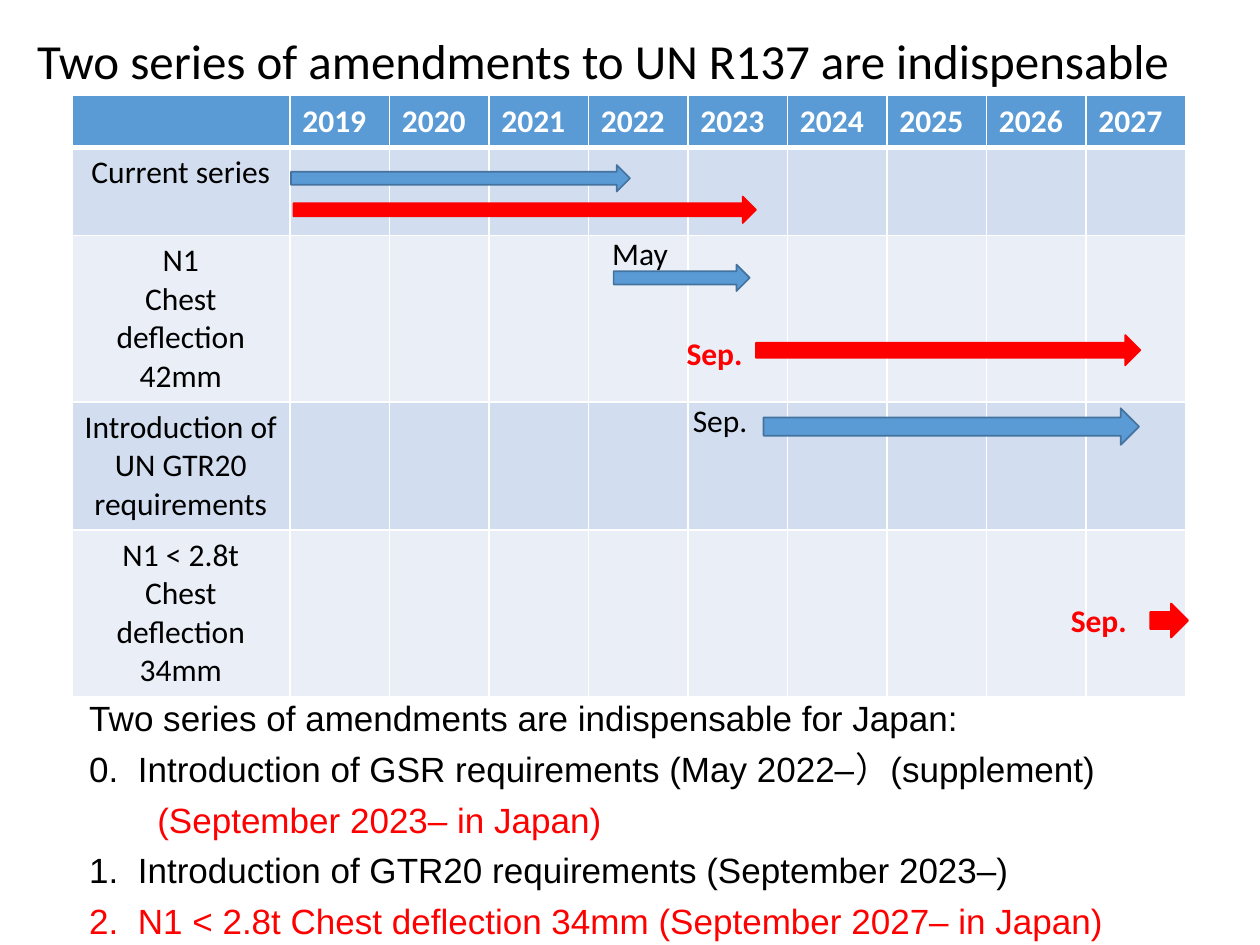
from lxml.etree import SubElement
from pptx import Presentation
from pptx.dml.color import RGBColor
from pptx.enum.shapes import MSO_SHAPE as Shape
from pptx.enum.text import MSO_ANCHOR as Anchor, PP_ALIGN as Align
from pptx.oxml.ns import qn
from pptx.util import Inches, Pt

BLUE, DARK_BLUE, RED = "5B9BD5", "43739E", "FF0000"
BLACK, WHITE = "000000", "FFFFFF"
BANDS = ["D2DEEF", "EAEFF7"]


def color(value):
    return RGBColor.from_string(value)


def write(frame, lines, font_color, alignment=Align.LEFT, **formats):
    frame.text = "\n".join(lines)
    values = {"name": "Calibri", "size": Pt(18), "bold": False, **formats}
    for paragraph in frame.paragraphs:
        paragraph.alignment = alignment
        for run in paragraph.runs:
            run.font.color.rgb = color(font_color)
            for name, value in values.items():
                setattr(run.font, name, value)


presentation = Presentation()
presentation.slide_width, presentation.slide_height = Inches(10), Inches(7.5)
slide = presentation.slides.add_slide(presentation.slide_layouts[5])

title = slide.shapes.title
title_place = {"left": 0.14, "top": 0.19, "width": 9.29, "height": 0.57}
for name, value in title_place.items():
    setattr(title, name, Inches(value))
title.text_frame.word_wrap = False
title.text_frame.vertical_anchor = Anchor.TOP
write(title.text_frame, ["Two series of amendments to UN R137 are indispensable"],
      BLACK, Align.CENTER, size=Pt(28))

row_labels = [
    ["Current series"],
    ["N1", "Chest deflection", "42mm"],
    ["Introduction of UN GTR20 requirements"],
    ["N1 < 2.8t", "Chest deflection 34mm"],
]
years = range(2019, 2028)
row_heights = [0.41, 0.7, 1.3, 1, 1.3]
table = slide.shapes.add_table(5, 10, Inches(0.57), Inches(0.76),
                               Inches(8.86), Inches(4.71)).table
for index, column in enumerate(table.columns):
    column.width = Inches(0.79 if index else 1.73)
for row_index, row in enumerate(table.rows):
    row.height = Inches(row_heights[row_index])
    for column_index, cell in enumerate(row.cells):
        properties = cell._tc.get_or_add_tcPr()
        for side in ["lnL", "lnR", "lnT", "lnB"]:
            thick = (row_index, side) in [(0, "lnB"), (1, "lnT")]
            border = SubElement(properties, qn(f"a:{side}"), w=str(Pt(3 if thick else 1)))
            border_fill = SubElement(border, qn("a:solidFill"))
            SubElement(border_fill, qn("a:srgbClr"), val=WHITE)
        cell.fill.solid()
        cell.fill.fore_color.rgb = color(BANDS[(row_index - 1) % 2] if row_index else BLUE)
        if row_index == 0 and column_index:
            write(cell.text_frame, [str(years[column_index - 1])], WHITE, bold=True)
        elif row_index and column_index == 0:
            write(cell.text_frame, row_labels[row_index - 1], BLACK, Align.CENTER)

arrows = [
    (2.31, 1.31, 2.69, 0.21, BLUE, DARK_BLUE),
    (4.87, 2.1, 1.08, 0.21, BLUE, DARK_BLUE),
    (6.06, 3.24, 2.98, 0.29, BLUE, DARK_BLUE),
    (9.13, 4.79, 0.3, 0.27, RED, RED),
    (2.33, 1.56, 3.67, 0.21, RED, RED),
    (6, 2.66, 3.05, 0.24, RED, RED),
]
for *place, fill, line in arrows:
    arrow = slide.shapes.add_shape(Shape.RIGHT_ARROW, *map(Inches, place))
    arrow.shadow.inherit = False
    arrow.fill.solid()
    arrow.fill.fore_color.rgb = color(fill)
    arrow.line.color.rgb = color(line)
    arrow.line.width = Pt(1)

month_labels = [
    ("May", 4.76, 1.81, BLACK),
    ("Sep.", 8.4, 4.72, RED),
    ("Sep.", 5.4, 3.13, BLACK),
    ("Sep.", 5.35, 2.6, RED),
]
for month, left, top, font_color in month_labels:
    label = slide.shapes.add_textbox(Inches(left), Inches(top), Inches(0.65), Inches(0.4))
    label.text_frame.word_wrap = False
    write(label.text_frame, [month], font_color, bold=font_color == RED)

summary_lines = [
    ("Two series of amendments are indispensable for Japan:", BLACK),
    ("0.  Introduction of GSR requirements (May 2022–）(supplement)", BLACK),
    ("(September 2023– in Japan)", RED),
    ("1.  Introduction of GTR20 requirements (September 2023–)", BLACK),
    ("2.  N1 < 2.8t Chest deflection 34mm (September 2027– in Japan)", RED),
]
summary = slide.shapes.add_textbox(Inches(0.61), Inches(5.48), Inches(8.51), Inches(2.05))
summary.text_frame.word_wrap = True
write(summary.text_frame, [text for text, _ in summary_lines], BLACK,
      name="Arial", size=Pt(20))
for paragraph, (_, font_color) in zip(summary.text_frame.paragraphs, summary_lines):
    paragraph.space_before = Pt(5)
    paragraph.runs[0].font.color.rgb = color(font_color)
summary.text_frame.paragraphs[2]._p.get_or_add_pPr().set("marL", str(Inches(0.54)))

presentation.save("out.pptx")
